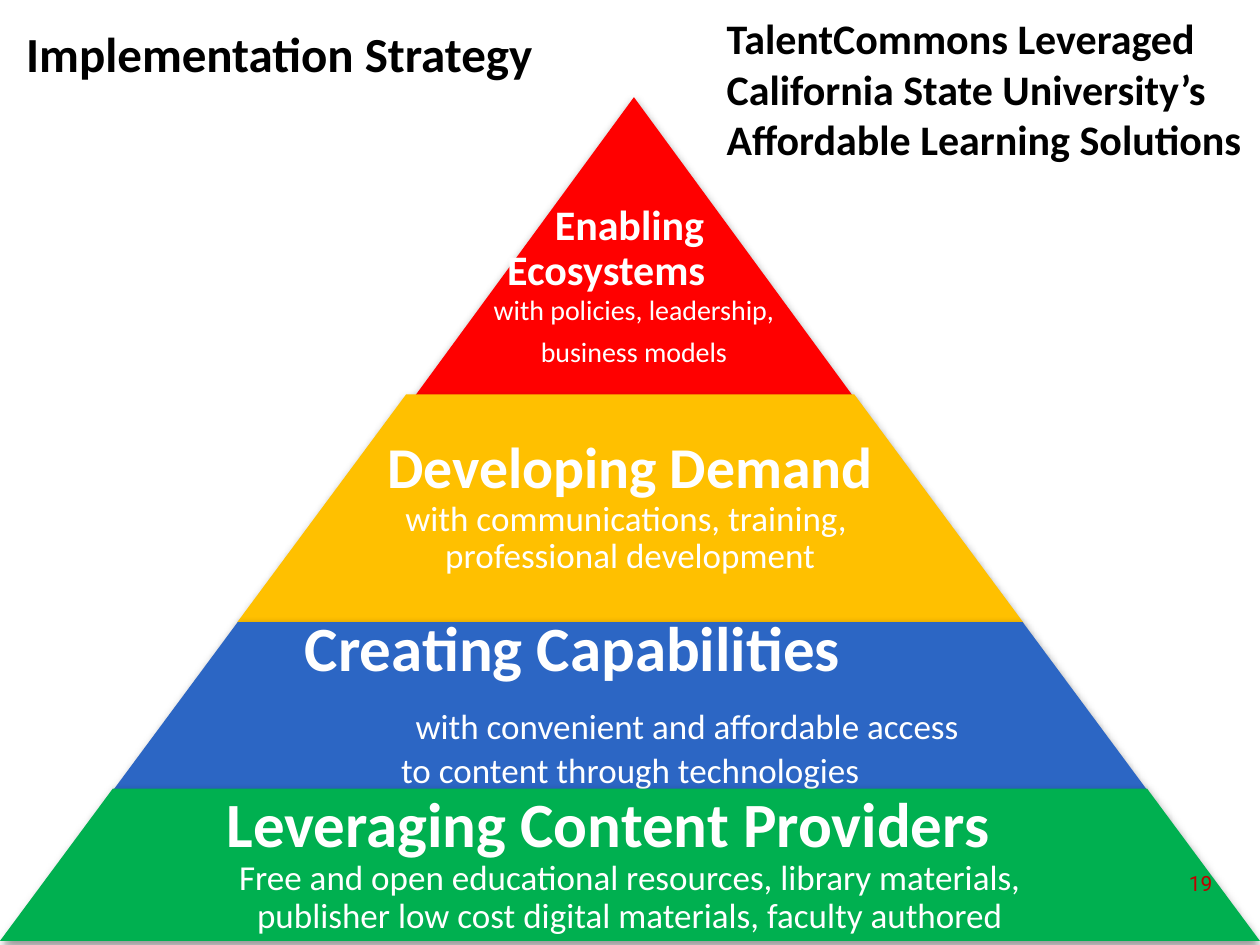
from lxml.etree import SubElement
from pptx import Presentation
from pptx.dml.color import RGBColor
from pptx.enum.shapes import MSO_SHAPE
from pptx.enum.text import MSO_ANCHOR, PP_ALIGN
from pptx.oxml.ns import qn
from pptx.util import Cm, Pt

WHITE = RGBColor(0xFF, 0xFF, 0xFF)
BLACK = RGBColor(0x00, 0x00, 0x00)
RED = RGBColor(0xFF, 0x00, 0x00)
AMBER = RGBColor(0xFF, 0xC0, 0x00)
BLUE = RGBColor(0x2C, 0x66, 0xC4)
GREEN = RGBColor(0x00, 0xB0, 0x50)
DARK_RED = RGBColor(0xC0, 0x00, 0x00)

SLOPE = 0.741

# Box (left, top, width, height) and text offset in cm; each line is
# (text, size, bold, space before in pt, sideways shift in cm).
TIERS = [
    ((8.31, 1.96, 8.94, 6.1), RED, 2.16, [
        ("Enabling", 24, True, 0, -0.09),
        ("Ecosystems", 24, True, 0, -0.56),
        ("with policies, leadership,", 16, False, 1, 0),
        ("business models", 16, False, 6.5, 0)]),
    ((4.78, 7.95, 15.85, 4.6), AMBER, 0.89, [
        ("Developing Demand", 33, True, 0, 0),
        ("with communications, training,", 20, False, 0, -0.08),
        ("professional development", 20, False, 0, 0)]),
    ((2.29, 12.54, 20.83, 3.38), BLUE, -0.1, [
        ("Creating Capabilities", 36, True, 0, -1.16),
        ("with convenient and affordable access", 20, False, 14, 1.15),
        ("to content through technologies", 20, False, 3.5, 0)]),
    ((0, 15.9, 25.4, 3.07), GREEN, 0.08, [
        ("Leveraging Content Providers", 36, True, 0, -0.44),
        ("Free and open educational resources, library materials,", 20, False, 0, 0),
        ("publisher low cost digital materials, faculty authored", 20, False, 0, 0)]),
]


def add_frame(slide, box, anchor=MSO_ANCHOR.TOP, inset=None):
    tf = slide.shapes.add_textbox(*(Cm(v) for v in box)).text_frame
    tf.word_wrap = True
    tf.vertical_anchor = anchor
    if inset is not None:
        tf.margin_left = tf.margin_right = tf.margin_top = tf.margin_bottom = Cm(inset)
    return tf


def add_line(tf, text, size, color, bold=False, font="Calibri",
             align=PP_ALIGN.LEFT, spacing=None, before=0, indent=0):
    first = tf.paragraphs[0]
    p = tf.add_paragraph() if first.runs else first
    p.alignment = align
    if spacing:
        p.line_spacing = spacing
    if before:
        p.space_before = Pt(before)
    p._p.get_or_add_pPr().set("marL", str(Cm(indent)))
    r = p.add_run()
    r.text = text
    r.font.name = font
    r.font.size = Pt(size)
    r.font.bold = bold
    r.font.color.rgb = color


def add_soft_shadow(sp):
    sp.shadow.inherit = False
    effects = sp._element.spPr.find(qn("a:effectLst"))
    shadow = SubElement(effects, qn("a:outerShdw"), blurRad=str(Pt(5)),
                        dist=str(Pt(2)), dir="5400000", rotWithShape="0")
    color = SubElement(shadow, qn("a:srgbClr"), val="000000")
    SubElement(color, qn("a:alpha"), val="40000")


def draw_tier(slide, box, fill, text_offset, lines):
    """Draw a trapezoid and its lines, centred on it plus each line's shift."""
    left, top, width, height = box
    sp = slide.shapes.add_shape(MSO_SHAPE.TRAPEZOID, *(Cm(v) for v in box))
    sp.adjustments[0] = SLOPE
    sp.fill.solid()
    sp.fill.fore_color.rgb = fill
    sp.line.fill.background()
    add_soft_shadow(sp)

    # The frame is centred on the leftmost line; indents move the others right.
    reach = -min(shift for *_, shift in lines)
    tf = add_frame(slide, (left, top + text_offset, width - 2 * reach,
                           height - text_offset), inset=0)
    for text, size, bold, before, shift in lines:
        add_line(tf, text, size, WHITE, bold=bold, align=PP_ALIGN.CENTER,
                 spacing=0.9, before=before, indent=2 * (shift + reach))


def draw_heading(slide, box, lines, size):
    tf = add_frame(slide, box)
    for text in lines:
        add_line(tf, text, size, BLACK, bold=True)


def draw_page_number(slide, box, number):
    tf = add_frame(slide, box, anchor=MSO_ANCHOR.MIDDLE)
    add_line(tf, number, 12, DARK_RED, font="Roboto", align=PP_ALIGN.RIGHT)


def main():
    prs = Presentation()
    prs.slide_width, prs.slide_height = Cm(25.4), Cm(19.05)
    slide = prs.slides.add_slide(prs.slide_layouts[6])
    for tier in TIERS:
        draw_tier(slide, *tier)
    draw_heading(slide, (0.28, 0.34, 12.09, 1.45), ["Implementation Strategy"], 28)
    draw_heading(slide, (14.4, 0.13, 11, 3.33),
                 ["TalentCommons Leveraged",
                  "California State University’s Affordable Learning Solutions"], 24)
    draw_page_number(slide, (21.95, 17.43, 2.74, 0.74), "19")
    prs.save("out.pptx")


if __name__ == "__main__":
    main()
